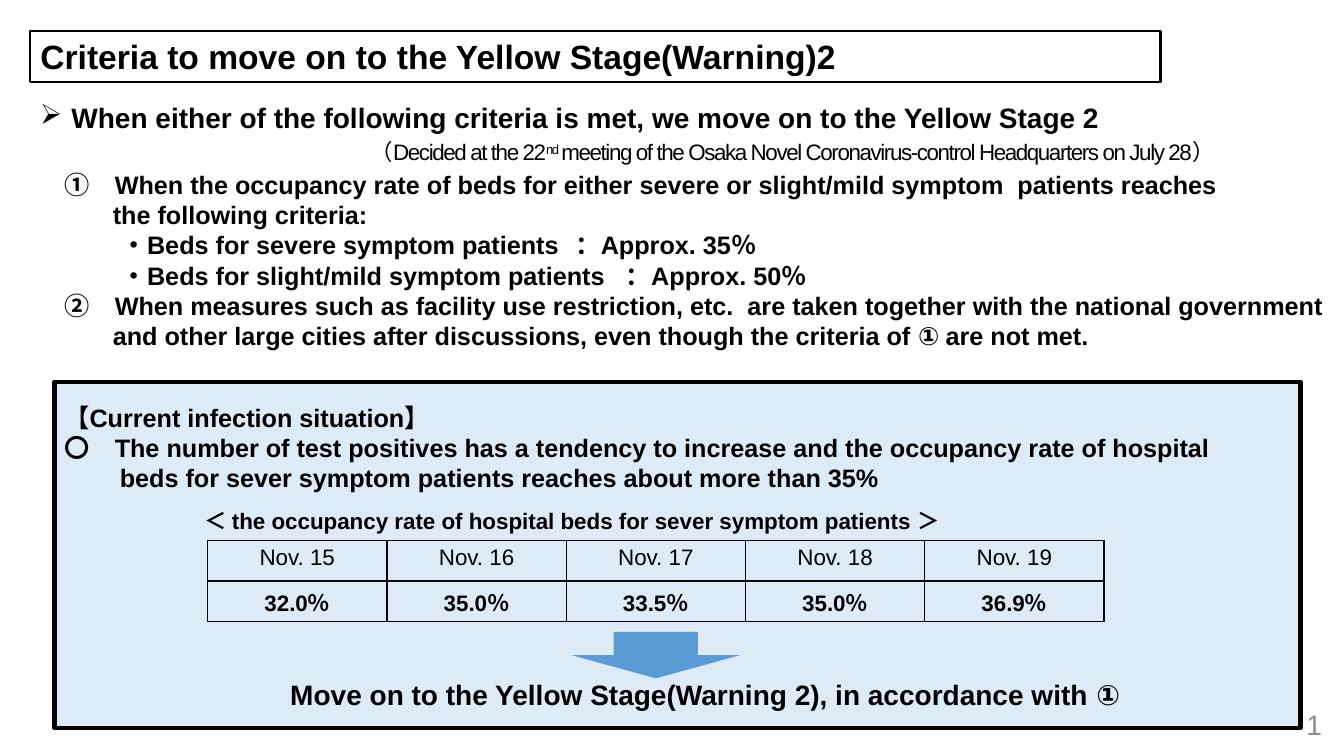
from pptx import Presentation
from pptx.dml.color import RGBColor
from pptx.enum.shapes import MSO_SHAPE as Preset
from pptx.enum.text import MSO_ANCHOR as Anchor, PP_ALIGN as Align
from pptx.oxml import parse_xml
from pptx.oxml.ns import nsdecls
from pptx.util import Inches, Pt

FONT = "Arial"
BLACK, GREY, BLUE, PALE_BLUE = "000000", "8C8C8C", "5B9BD5", "DEEBF7"

SITUATION = [
    dict(text="【Current infection situation】", line_spacing=1.5),
    dict(text="〇　The number of test positives has a tendency to increase and the "
              "occupancy rate of hospital\vbeds for sever symptom patients reaches "
              "about more than 35%", left=0.55, first=-0.55),
]
CRITERIA = [
    dict(text="①　When the occupancy rate of beds for either severe or slight/mild "
              "symptom  patients reaches\vthe following criteria:",
         left=0.48, first=-0.48),
    dict(text="・Beds for severe symptom patients\t：Approx. 35％", left=0.57, tab=5.9),
    dict(text="・Beds for slight/mild symptom patients\t：Approx. 50％", left=0.57, tab=5.9),
    dict(text="②　When measures such as facility use restriction, etc.  are taken "
              "together with the national government\vand other large cities after "
              "discussions, even though the criteria of ① are not met.",
         left=0.48, first=-0.48),
]
OCCUPANCY = [
    ["Nov. 15", "Nov. 16", "Nov. 17", "Nov. 18", "Nov. 19"],
    ["32.0％", "35.0％", "33.5％", "35.0％", "36.9％"],
]


def rgb(value):
    return RGBColor.from_string(value)


def place(shape, box):
    for name, value in zip(("left", "top", "width", "height"), box):
        setattr(shape, name, Inches(value))


def set_font(font, size, bold=True, color=BLACK):
    for name, value in dict(name=FONT, size=Pt(size), bold=bold).items():
        setattr(font, name, value)
    font.color.rgb = rgb(color)


def set_outline(shape, color, width):
    shape.line.color.rgb = rgb(color)
    shape.line.width = Pt(width)


def format_paragraph(paragraph, left=0, first=0, tab=None, **formats):
    """Apply indents in inches, an optional tab stop and paragraph attributes."""
    properties = paragraph._p.get_or_add_pPr()
    properties.set("marL", str(Inches(left)))
    properties.set("indent", str(Inches(first)))
    for name, value in formats.items():
        setattr(paragraph, name, value)
    if tab:
        properties.append(parse_xml(
            f'<a:tabLst {nsdecls("a")}><a:tab pos="{Inches(tab)}" algn="l"/></a:tabLst>'))


def fill_text(frame, paragraphs, size, bold=True, color=BLACK, anchor=Anchor.TOP):
    frame.word_wrap = True
    frame.vertical_anchor = anchor
    for index, item in enumerate(paragraphs):
        formats = dict(alignment=Align.LEFT) | item
        paragraph = frame.paragraphs[0] if index == 0 else frame.add_paragraph()
        paragraph.text = formats.pop("text")
        format_paragraph(paragraph, **formats)
        for run in paragraph.runs:
            set_font(run.font, size, bold, color)


def add_text(slide, box, paragraphs, size, **formats):
    frame = slide.shapes.add_textbox(*map(Inches, box)).text_frame
    fill_text(frame, paragraphs, size, **formats)
    return frame


def add_preset(slide, preset, box, fill):
    shape = slide.shapes.add_shape(preset, *map(Inches, box))
    shape.shadow.inherit = False
    shape.fill.solid()
    shape.fill.fore_color.rgb = rgb(fill)
    shape.line.fill.background()
    return shape


def add_title(slide, text):
    title = slide.shapes.title
    place(title, (0.3, 0.31, 11.21, 0.5))
    set_outline(title, BLACK, 1.5)
    fill_text(title.text_frame, [dict(text=text)], 24)


def add_lead(slide):
    """Bulleted lead sentence with the tightly spaced decision note below."""
    frame = add_text(slide, (0.3, 0.95, 12.59, 0.77), [
        dict(text="When either of the following criteria is met, "
                  "we move on to the Yellow Stage 2", left=0.31, first=-0.31)], 20)
    frame.paragraphs[0]._p.get_or_add_pPr().append(
        parse_xml(f'<a:buChar {nsdecls("a")} char="➢"/>'))
    note = frame.add_paragraph()
    format_paragraph(note, left=3.28, space_before=Pt(3))
    for text, baseline in (
            ("（Decided at the 22", 0), ("nd ", 30000),
            ("meeting of the Osaka Novel Coronavirus-control Headquarters on July 28）", 0)):
        run = note.add_run()
        run.text = text
        set_font(run.font, 16, bold=False)
        properties = run._r.get_or_add_rPr()
        properties.set("spc", "-100")
        properties.set("baseline", str(baseline))


def set_borders(cell, color, width):
    properties = cell._tc.get_or_add_tcPr()
    for position, side in enumerate(("lnL", "lnR", "lnT", "lnB")):
        properties.insert(position, parse_xml(
            f'<a:{side} {nsdecls("a")} w="{Pt(width)}"><a:solidFill>'
            f'<a:srgbClr val="{color}"/></a:solidFill></a:{side}>'))


def add_occupancy_table(slide, rows, box):
    table = slide.shapes.add_table(len(rows), len(rows[0]), *map(Inches, box)).table
    table.first_row = table.horz_banding = False
    for row_index, row in enumerate(rows):
        for column_index, text in enumerate(row):
            cell = table.cell(row_index, column_index)
            cell.fill.background()
            set_borders(cell, BLACK, 1)
            fill_text(cell.text_frame, [dict(text=text, alignment=Align.CENTER)],
                      16, bold=row_index > 0)


def main():
    presentation = Presentation()
    presentation.slide_width = Inches(13.33)
    presentation.slide_height = Inches(7.5)
    slide = presentation.slides.add_slide(presentation.slide_layouts[5])

    # Title and criteria
    add_title(slide, "Criteria to move on to the Yellow Stage(Warning)2")
    add_lead(slide)
    add_text(slide, (0.54, 1.63, 14.28, 1.92), CRITERIA, 18)

    # Current situation panel
    panel = add_preset(slide, Preset.RECTANGLE, (0.54, 3.79, 12.36, 3.43), PALE_BLUE)
    set_outline(panel, BLACK, 3)
    fill_text(panel.text_frame, SITUATION, 18)
    add_text(slide, (1.93, 4.98, 11.13, 0.37), [
        dict(text="＜ the occupancy rate of hospital beds for sever symptom patients ＞")], 16)
    add_occupancy_table(slide, OCCUPANCY, (2.06, 5.36, 8.89, 0.81))

    # Conclusion
    add_preset(slide, Preset.DOWN_ARROW, (5.67, 6.27, 1.67, 0.46), BLUE)
    add_text(slide, (2.78, 6.67, 9.29, 0.44), [
        dict(text="Move on to the Yellow Stage(Warning 2), in accordance with ①")], 20)

    # Page number
    add_text(slide, (10.21, 6.99, 3, 0.4), [dict(text="1", alignment=Align.RIGHT)],
             20, bold=False, color=GREY, anchor=Anchor.MIDDLE)

    presentation.save("out.pptx")


if __name__ == "__main__":
    main()
